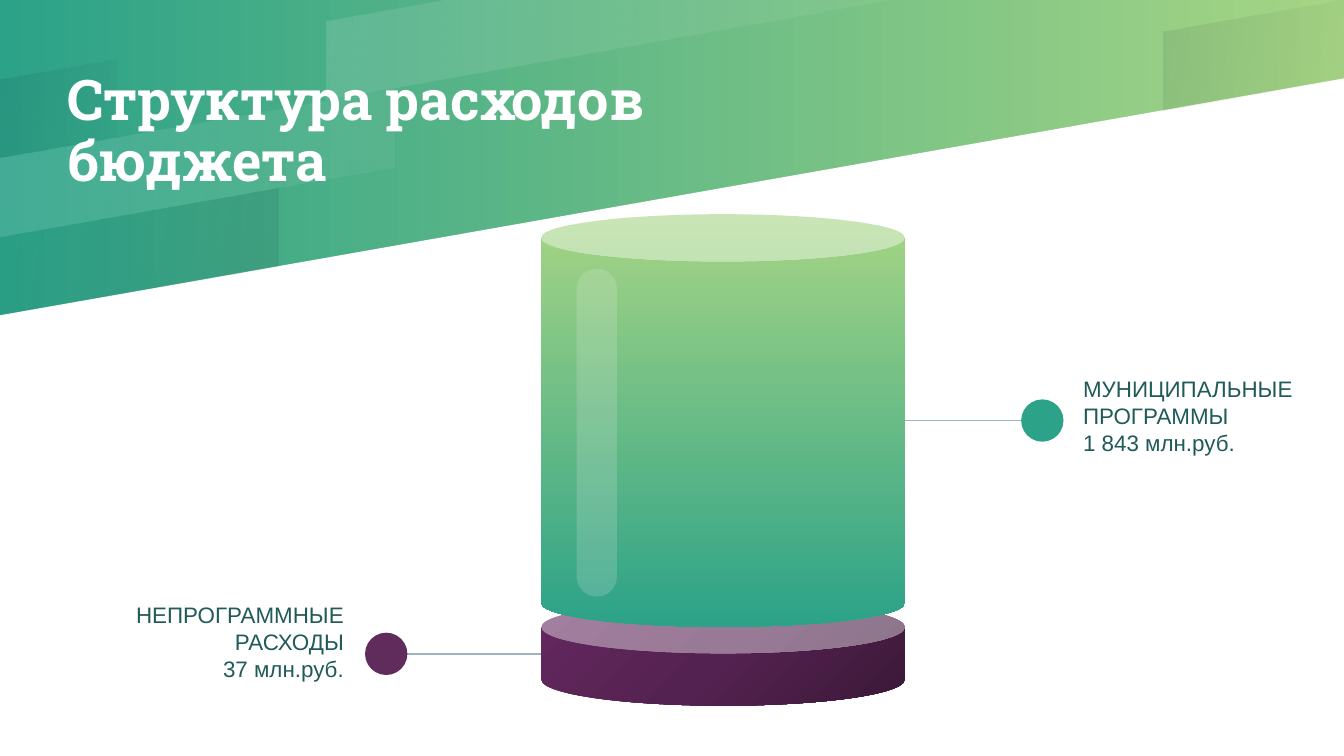
from lxml import etree
from pptx import Presentation
from pptx.dml.color import RGBColor
from pptx.enum import shapes, text
from pptx.oxml.ns import qn
from pptx.util import Cm, Pt

WIDTH, HEIGHT = 25.4, 14.29
BAND_HEIGHT, BAND_SLOPE = 1.49, 0.1763

WHITE = RGBColor(0xFF, 0xFF, 0xFF)
INK = RGBColor(0x00, 0x00, 0x1A)
TEAL = RGBColor(0x2C, 0xA2, 0x88)
GREEN = RGBColor(0xA6, 0xD5, 0x84)
PURPLE = RGBColor(0x60, 0x2C, 0x5C)
PURPLE_DARK = RGBColor(0x3B, 0x18, 0x38)
PURPLE_MID = RGBColor(0x54, 0x22, 0x50)
PURPLE_LIGHT = RGBColor(0x64, 0x28, 0x5F)
GLOSS = RGBColor(0xF2, 0xF2, 0xF2)
LABEL = RGBColor(0x20, 0x5A, 0x59)
LINE = RGBColor(0x9E, 0xB3, 0xC2)


def add_child(parent, tag, **attributes):
    child = etree.SubElement(parent, qn(tag))
    for name, value in attributes.items():
        child.set(name, str(value))
    return child


def set_alpha(color_element, percent):
    add_child(color_element, "a:alpha", val=percent * 1000)


def set_gradient(fill, element, stops, angle=None):
    """Stops are (position, colour, opacity); no angle means radial from bottom right."""
    fill.gradient()
    gradient = element.find(".//" + qn("a:gradFill"))
    for child in list(gradient):
        gradient.remove(child)
    stop_list = add_child(gradient, "a:gsLst")
    for position, color, opacity in stops:
        stop = add_child(stop_list, "a:gs", pos=position * 1000)
        set_alpha(add_child(stop, "a:srgbClr", val=color), opacity)
    if angle is None:
        radial = add_child(gradient, "a:path", path="circle")
        add_child(radial, "a:fillToRect", l=100000, t=100000)
    else:
        add_child(gradient, "a:lin", ang=angle * 60000, scaled=0)


def add_polygon(slide, points):
    points = [(Cm(x), Cm(y)) for x, y in points]
    builder = slide.shapes.build_freeform(*points[0], scale=1.0)
    builder.add_line_segments(points[1:], close=True)
    shape = builder.convert_to_shape()
    shape.shadow.inherit = False
    shape.line.fill.background()
    return shape


def add_band(slide, row, left, right, color, opacities):
    """Slanted strip in the given row, cut off at the slide's top edge."""
    def edge(line, x):
        return max(0, line * BAND_HEIGHT - BAND_SLOPE * x)

    corner = min(right, row * BAND_HEIGHT / BAND_SLOPE)
    band = add_polygon(slide, [
        (left, edge(row, left)), (left, edge(row + 1, left)),
        (right, edge(row + 1, right)), (right, edge(row, right)),
        (corner, edge(row, corner))])
    stops = [(0, color, opacities[0]), (100, color, opacities[1])]
    set_gradient(band.fill, band._element.spPr, stops, 10)


def add_preset(slide, kind, left, top, width, height, color=None, adjustment=None):
    shape = slide.shapes.add_shape(kind, Cm(left), Cm(top), Cm(width), Cm(height))
    shape.shadow.inherit = False
    shape.line.fill.background()
    if color is not None:
        shape.fill.solid()
        shape.fill.fore_color.rgb = color
    if adjustment is not None:
        shape.adjustments[0] = adjustment
    return shape


def add_text(slide, lines, left, top, width, height, size, font, color,
             align=text.PP_ALIGN.LEFT, inset=0.25, bold=False, spacing=1.0):
    box = slide.shapes.add_textbox(Cm(left), Cm(top), Cm(width), Cm(height))
    frame = box.text_frame
    frame.word_wrap = True
    frame.vertical_anchor = text.MSO_ANCHOR.MIDDLE
    frame.margin_left = frame.margin_right = Cm(inset)
    frame.margin_top = frame.margin_bottom = Cm(inset)
    frame.text = "\n".join(lines)
    for paragraph in frame.paragraphs:
        paragraph.alignment = align
        paragraph.line_spacing = spacing
        paragraph.font.size = Pt(size)
        paragraph.font.name = font
        paragraph.font.bold = bold
        paragraph.font.color.rgb = color
    return box


def add_text_shadow(box):
    for run in box.text_frame.paragraphs[0].runs:
        effects = add_child(run._r.get_or_add_rPr(), "a:effectLst")
        shadow = add_child(effects, "a:outerShdw", blurRad=38100, dist=38100, dir=2700000)
        set_alpha(add_child(shadow, "a:srgbClr", val="000000"), 43)


def add_leader(slide, start, end, y):
    line = slide.shapes.add_connector(
        shapes.MSO_CONNECTOR.STRAIGHT, Cm(start), Cm(y), Cm(end), Cm(y))
    line.line.color.rgb = LINE
    line.line.width = Pt(0.75)
    add_child(line._element.spPr, "a:effectLst")


def main():
    presentation = Presentation()
    presentation.slide_width, presentation.slide_height = Cm(WIDTH), Cm(HEIGHT)
    slide = presentation.slides.add_slide(presentation.slide_layouts[6])

    # Slanted header
    set_gradient(slide.background.fill, slide._element,
                 [(0, TEAL, 100), (100, GREEN, 100)], 0)
    header_left = 4 * BAND_HEIGHT
    header_right = header_left - BAND_SLOPE * WIDTH
    body = add_polygon(slide, [(0, HEIGHT), (WIDTH, HEIGHT),
                               (WIDTH, header_right), (0, header_left)])
    body.fill.solid()
    body.fill.fore_color.rgb = WHITE
    for row, left, right, color, opacities in [
            (1, 6.18, 16.9, WHITE, (12, 5)),
            (1, 0, 2.22, INK, (8, 2)),
            (3, 0, 5.26, INK, (2, 8)),
            (3, 21.99, WIDTH, INK, (8, 2)),
            (2, 0, 7.45, WHITE, (12, 5))]:
        add_band(slide, row, left, right, color, opacities)
    title = add_text(slide, ["Структура расходов бюджета"], 1.27, 0, 15.24, 5.03,
                     30, "Roboto Slab", WHITE, inset=0, bold=True, spacing=0.9)
    add_text_shadow(title)

    # Labels and leader lines
    add_text(slide, ["МУНИЦИПАЛЬНЫЕ ПРОГРАММЫ", "1 843 млн.руб."],
             20.22, 5.94, 4.5, 3.84, 12, "Arial", LABEL)
    add_text(slide, ["НЕПРОГРАММНЫЕ", "РАСХОДЫ", "37 млн.руб."],
             1.57, 11.01, 5.18, 2.24, 12, "Arial", LABEL, text.PP_ALIGN.RIGHT)
    add_leader(slide, 19.46, 17.1, 7.95)
    add_leader(slide, 7.11, 11.86, 12.36)

    # Stacked cylinders
    can = shapes.MSO_SHAPE.CAN
    base = add_preset(slide, can, 10.23, 11.36, 6.87, 1.98, adjustment=0.5)
    set_gradient(base.fill, base._element.spPr,
                 [(0, PURPLE_DARK, 100), (50, PURPLE_MID, 100), (100, PURPLE_LIGHT, 100)])
    tower = add_preset(slide, can, 10.23, 4.05, 6.87, 7.8, adjustment=0.13)
    set_gradient(tower.fill, tower._element.spPr,
                 [(0, GREEN, 100), (100, TEAL, 100)], 90)

    # Markers and highlight
    for left, top, color in [(19.3, 7.55, TEAL), (6.9, 11.96, PURPLE)]:
        add_preset(slide, shapes.MSO_SHAPE.OVAL, left, top, 0.8, 0.8, color)
    gloss = add_preset(slide, shapes.MSO_SHAPE.ROUNDED_RECTANGLE,
                       10.9, 5.08, 0.76, 6.2, GLOSS, 0.5)
    set_alpha(gloss._element.spPr.find(".//" + qn("a:srgbClr")), 18)

    presentation.save("out.pptx")


if __name__ == "__main__":
    main()
